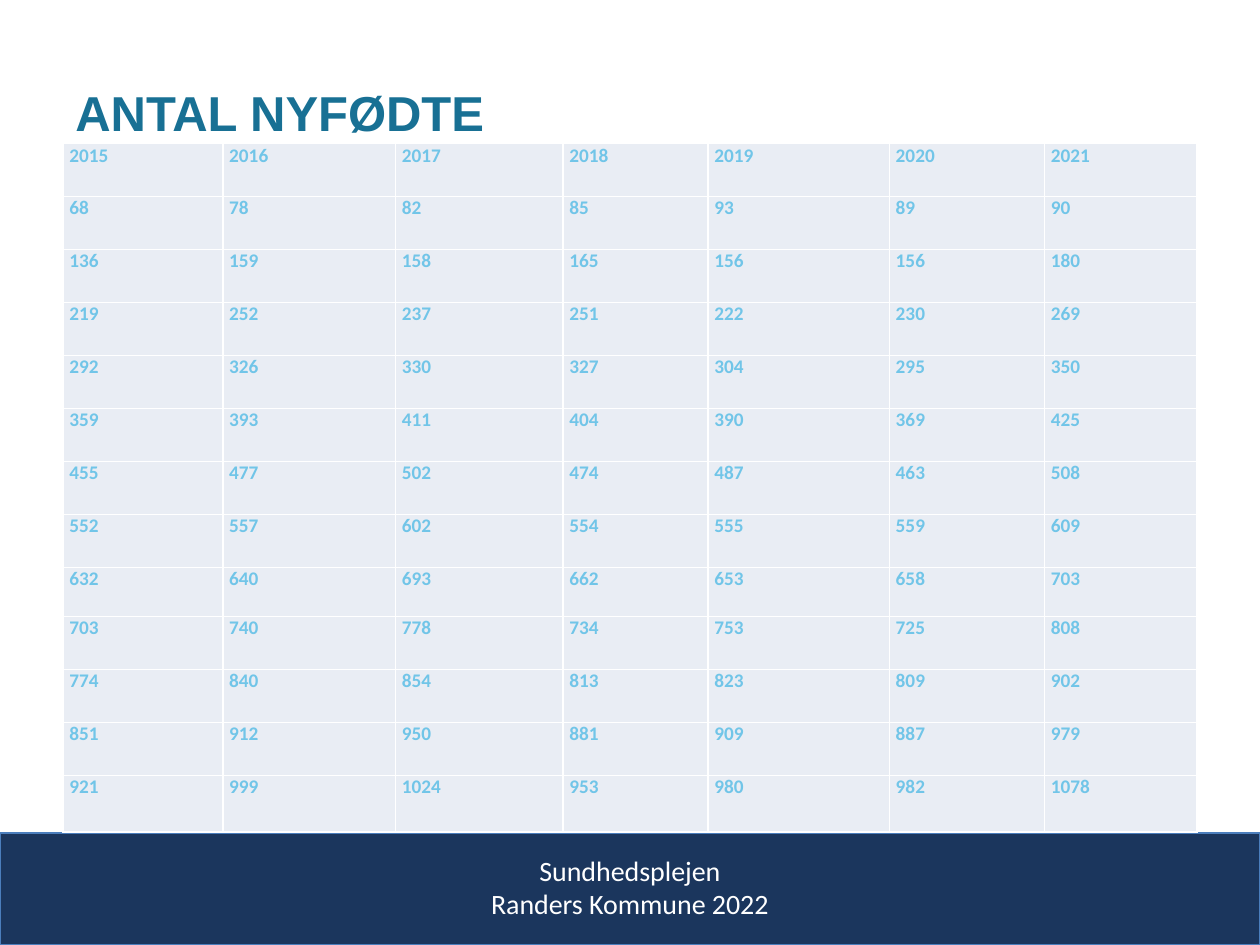
from pptx import Presentation
from pptx.dml.color import RGBColor
from pptx.enum.shapes import MSO_SHAPE
from pptx.enum.text import MSO_ANCHOR, PP_ALIGN
from pptx.util import Pt

TITLE = ["ANTAL NYFØDTE"]
FOOTER = ["Sundhedsplejen", "Randers Kommune 2022"]
BIRTHS_BY_YEAR = {
    2015: [68, 136, 219, 292, 359, 455, 552, 632, 703, 774, 851, 921],
    2016: [78, 159, 252, 326, 393, 477, 557, 640, 740, 840, 912, 999],
    2017: [82, 158, 237, 330, 411, 502, 602, 693, 778, 854, 950, 1024],
    2018: [85, 165, 251, 327, 404, 474, 554, 662, 734, 813, 881, 953],
    2019: [93, 156, 222, 304, 390, 487, 555, 653, 753, 823, 909, 980],
    2020: [89, 156, 230, 295, 369, 463, 559, 658, 725, 809, 887, 982],
    2021: [90, 180, 269, 350, 425, 508, 609, 703, 808, 902, 979, 1078],
}
COLUMN_WIDTHS = [91.4, 98.6, 95.8, 82.8, 103.7, 88.6, 87.1]
ROW_HEIGHTS = [30.3] * 8 + [28] + [30.3] * 3 + [32.5]

SLIDE_WIDTH, SLIDE_HEIGHT = 720, 540
MARGIN = 36
TABLE_TOP = 82
FOOTER_TOP = 476

TITLE_FONT = {"name": "Arial", "size": Pt(28), "bold": True}
FOOTER_FONT = {"name": "Calibri", "size": Pt(16)}
CELL_FONT = {"name": "Calibri", "size": Pt(11), "bold": True}
CELL_FORMAT = {"margin_left": Pt(3.6), "margin_right": Pt(3.6), "margin_top": 0,
               "margin_bottom": 0, "vertical_anchor": MSO_ANCHOR.TOP}
BOX_FORMAT = {"word_wrap": True, "vertical_anchor": MSO_ANCHOR.MIDDLE}


def color(hex_string):
    return RGBColor.from_string(hex_string)


def apply(target, values):
    for name, value in values.items():
        setattr(target, name, value)


def fill(target, hex_string):
    target.fill.solid()
    target.fill.fore_color.rgb = color(hex_string)


def write(frame, lines, font, hex_string, alignment=PP_ALIGN.LEFT):
    for index, line in enumerate(lines):
        paragraph = frame.add_paragraph() if index else frame.paragraphs[0]
        paragraph.alignment = alignment
        run = paragraph.add_run()
        run.text = line
        apply(run.font, font)
        run.font.color.rgb = color(hex_string)


def add_text(slide, bounds, *text):
    frame = slide.shapes.add_textbox(*map(Pt, bounds)).text_frame
    apply(frame, BOX_FORMAT)
    write(frame, *text)


def add_band(slide):
    band = slide.shapes.add_shape(MSO_SHAPE.RECTANGLE, 0, Pt(FOOTER_TOP),
                                  Pt(SLIDE_WIDTH), Pt(SLIDE_HEIGHT - FOOTER_TOP))
    band.shadow.inherit = False
    fill(band, "1B365D")
    band.line.color.rgb = color("4B7EBC")
    band.line.width = Pt(0.75)


def add_births(slide):
    rows = [list(BIRTHS_BY_YEAR), *zip(*BIRTHS_BY_YEAR.values())]
    table = slide.shapes.add_table(len(rows), len(COLUMN_WIDTHS), Pt(MARGIN), Pt(TABLE_TOP),
                                   Pt(sum(COLUMN_WIDTHS)), Pt(sum(ROW_HEIGHTS))).table
    apply(table, {"first_row": False, "horz_banding": False})
    for column, width in zip(table.columns, COLUMN_WIDTHS):
        column.width = Pt(width)
    for row, height, values in zip(table.rows, ROW_HEIGHTS, rows):
        row.height = Pt(height)
        for cell, value in zip(row.cells, values):
            apply(cell, CELL_FORMAT)
            fill(cell, "E9EDF4")
            write(cell.text_frame, [str(value)], CELL_FONT, "71C5E8")


def main():
    presentation = Presentation()
    apply(presentation, {"slide_width": Pt(SLIDE_WIDTH), "slide_height": Pt(SLIDE_HEIGHT)})
    slide = presentation.slides.add_slide(presentation.slide_layouts[6])
    add_band(slide)
    add_text(slide, (MARGIN, 46.8, SLIDE_WIDTH - 2 * MARGIN, 34.6), TITLE, TITLE_FONT, "187094")
    add_text(slide, (246, 484, 228, 45.4), FOOTER, FOOTER_FONT, "FFFFFF", PP_ALIGN.CENTER)
    add_births(slide)
    presentation.save("out.pptx")


if __name__ == "__main__":
    main()
